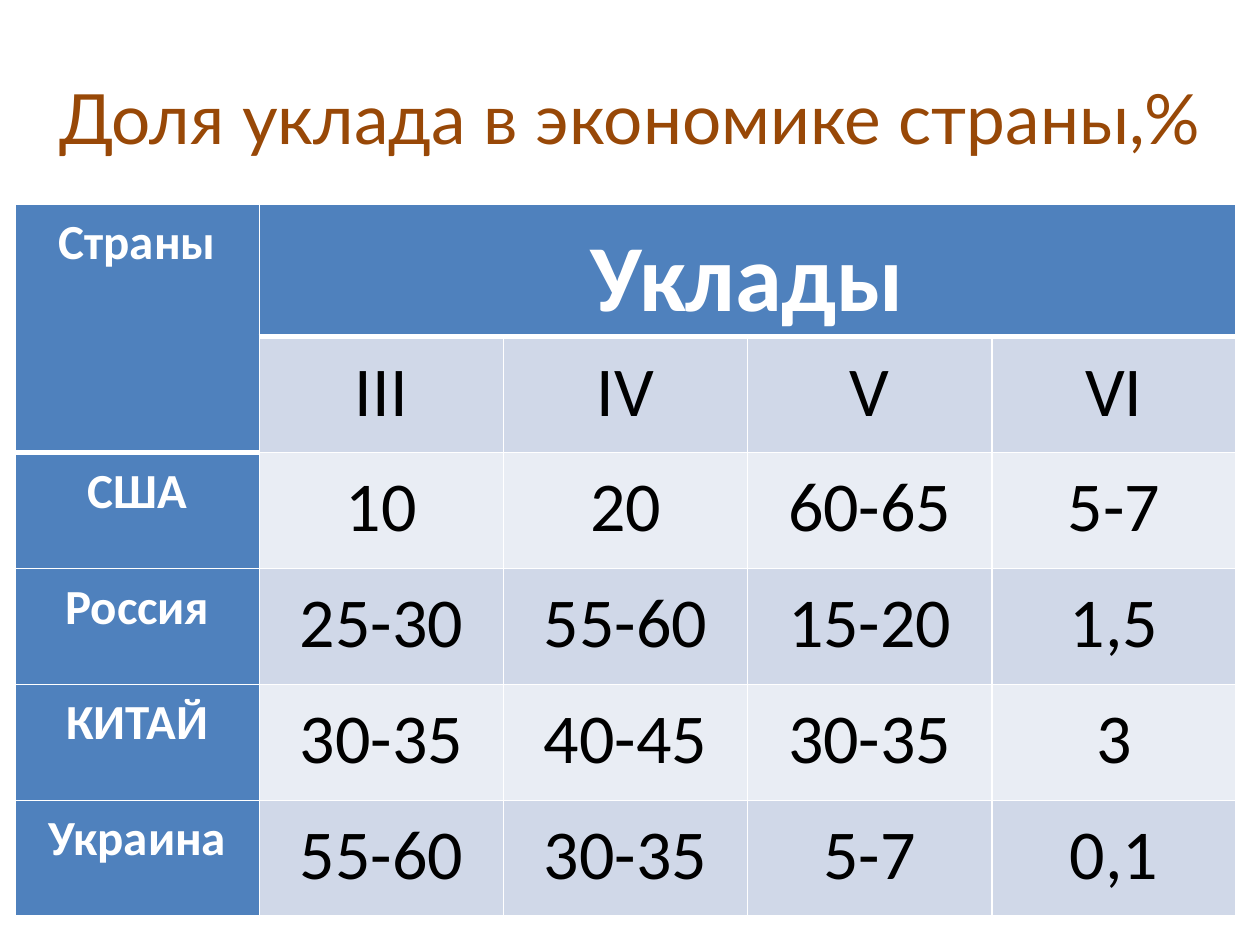
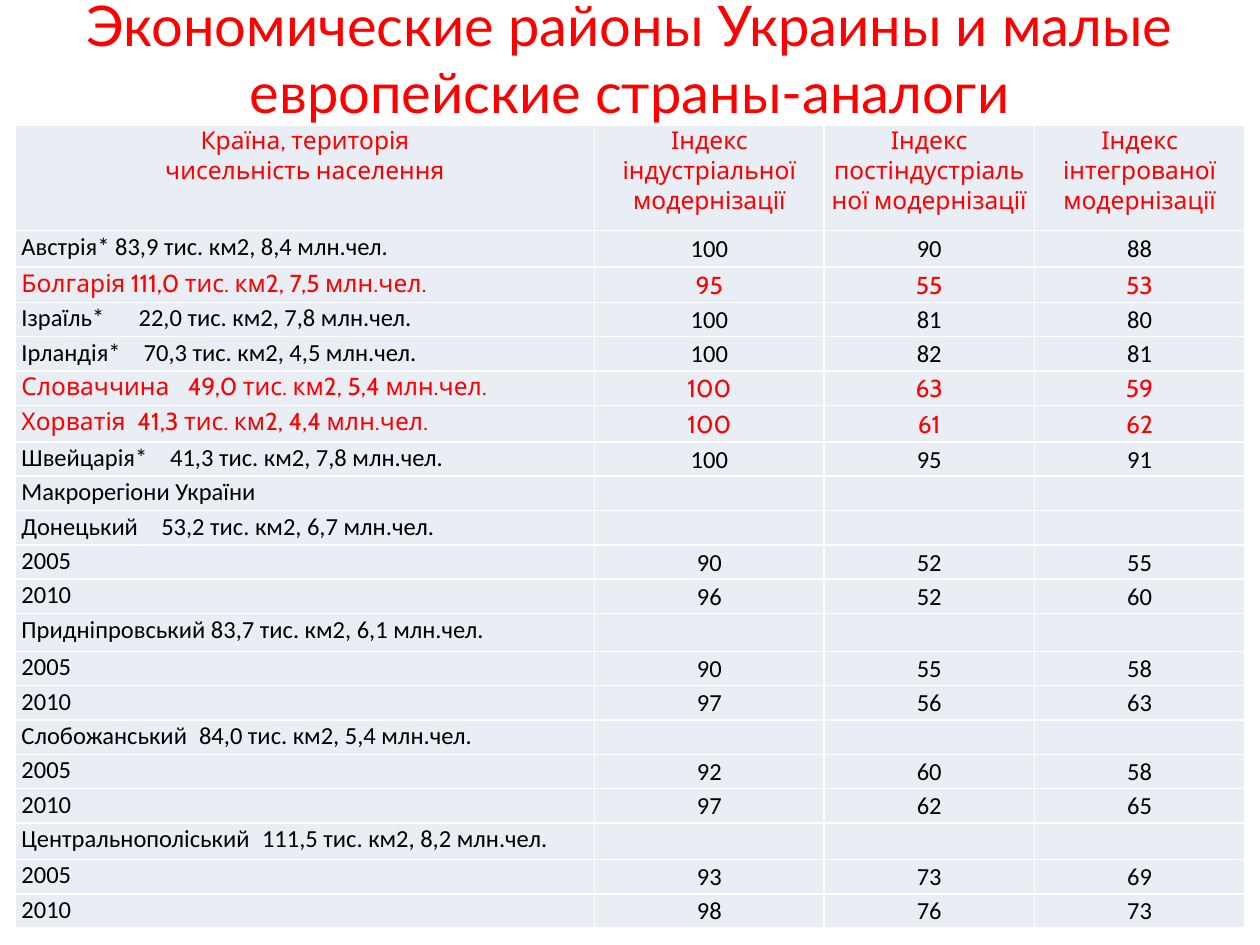
from lxml.etree import SubElement
from pptx import Presentation
from pptx.dml.color import RGBColor
from pptx.enum.text import MSO_ANCHOR, MSO_AUTO_SIZE, PP_ALIGN
from pptx.oxml.ns import qn
from pptx.util import Inches, Pt

# Colours
WHITE = RGBColor(0xFF, 0xFF, 0xFF)
BLACK = RGBColor(0x00, 0x00, 0x00)
RED = RGBColor(0xFF, 0x00, 0x00)
BROWN = RGBColor(0x98, 0x48, 0x07)
BLUE = RGBColor(0x4F, 0x81, 0xBD)
BAND = RGBColor(0xD0, 0xD8, 0xE8)
PALE = RGBColor(0xE9, 0xED, 0xF4)

# Text formats
HEAD = {"name": "Calibri", "size": Pt(28), "bold": True, "color": WHITE}
MAIN = {**HEAD, "size": Pt(54)}
DATA = {"name": "Calibri", "size": Pt(40), "bold": False, "color": BLACK}
PLAIN = {**DATA, "size": Pt(14)}
MARK = {**PLAIN, "name": "Cabin", "color": RED}

# Cell formats
WIDE = {"margin_left": Inches(0.07), "margin_right": Inches(0.07),
        "margin_top": 0, "margin_bottom": 0, "vertical_anchor": MSO_ANCHOR.TOP}
TIGHT = {**WIDE, "margin_left": Inches(0.05), "margin_right": Inches(0.05),
         "margin_top": Inches(0.01)}
MID = {**TIGHT, "vertical_anchor": MSO_ANCHOR.MIDDLE}

prs = Presentation()
prs.slide_width, prs.slide_height = Inches(10), Inches(7.5)


def start(text, top, height, size, color):
    """Add a slide with a title across its full width."""
    slide = prs.slides.add_slide(prs.slide_layouts[5])
    title = slide.shapes.title
    title.left, title.top = 0, Inches(top)
    title.width, title.height = prs.slide_width, Inches(height)
    frame = title.text_frame
    frame.text = text
    frame.auto_size = MSO_AUTO_SIZE.NONE
    frame.vertical_anchor = MSO_ANCHOR.MIDDLE
    para = frame.paragraphs[0]
    para.alignment = PP_ALIGN.CENTER
    font = para.runs[0].font
    font.name, font.size, font.color.rgb = "Lato", Pt(size), color
    return slide


def fill_cell(cell, text, look, box, fill, align=PP_ALIGN.CENTER, space=1.0, base=1):
    """Write one cell with white borders; base is the bottom line width."""
    for key, value in box.items():
        setattr(cell, key, value)
    props = cell._tc.get_or_add_tcPr()
    for side, width in {"lnL": 1, "lnR": 1, "lnT": 1, "lnB": base}.items():
        line = SubElement(props, qn(f"a:{side}"), w=str(Pt(width)))
        SubElement(SubElement(line, qn("a:solidFill")), qn("a:srgbClr"), val=str(WHITE))
    cell.fill.solid()
    cell.fill.fore_color.rgb = fill
    cell.text_frame.text = text
    for para in cell.text_frame.paragraphs:
        para.alignment, para.line_spacing = align, space
        for run in para.runs:
            for key, value in look.items():
                if key == "color":
                    run.font.color.rgb = value
                else:
                    setattr(run.font, key, value)
        if not para.runs:
            SubElement(para._p, qn("a:endParaRPr"), sz=str(int(look["size"].pt * 100)))


# Slide 1: share of each mode by country
slide = start("Доля уклада в экономике страны,%", 0.3, 1.25, 39.6, BROWN)
shares = [
    ["Страны", "Уклады", "", "", ""],
    ["", "III", "IV", "V", "VI"],
    ["США", "10", "20", "60-65", "5-7"],
    ["Россия", "25-30", "55-60", "15-20", "1,5"],
    ["КИТАЙ", "30-35", "40-45", "30-35", "3"],
    ["Украина", "55-60", "30-35", "5-7", "0,1"],
]
table = slide.shapes.add_table(6, 5, Inches(0.12), Inches(1.62),
                               Inches(9.69), Inches(5.64)).table
for i, row in enumerate(shares):
    table.rows[i].height = Inches(0.92 if i else 1.04)
    for j, text in enumerate(row):
        side = i == 0 or j == 0
        look = MAIN if i == 0 and j else HEAD if side else DATA
        fill = BLUE if side else BAND if i % 2 else PALE
        base = 3 if i == 0 or (i == 1 and j == 0) else 1
        fill_cell(table.cell(i, j), text, look, WIDE, fill, space=1.15, base=base)
table.cell(0, 0).merge(table.cell(1, 0))
table.cell(0, 1).merge(table.cell(0, 4))

# Slide 2: regions and similar countries; name, tab stop, size, indices
slide = start("Экономические районы Украины и малые европейские страны-аналоги",
              0, 0.92, 32, RED)
heads = ["Країна, територія\nчисельність населення",
         "Індекс індустріальної модернізації",
         "Індекс постіндустріальної модернізації",
         "Індекс інтегрованої модернізації"]
places = [
    ("Австрія* 83,9 тис. км2, 8,4 млн.чел.", 0, "", "100 90 88"),
    ("Болгарія 111,0 тис. км2, 7,5 млн.чел.", 0, "", "95 55 53"),
    ("Ізраїль*", 0.93, "22,0 тис. км2, 7,8 млн.чел.", "100 81 80"),
    ("Ірландія*", 0.97, "70,3 тис. км2, 4,5 млн.чел.", "100 82 81"),
    ("Словаччина", 1.32, "49,0 тис. км2, 5,4 млн.чел.", "100 63 59"),
    ("Хорватія", 0.92, "41,3 тис. км2, 4,4 млн.чел.", "100 61 62"),
    ("Швейцарія*", 1.18, "41,3 тис. км2, 7,8 млн.чел.", "100 95 91"),
    ("Макрорегіони України", 0, "", ""),
    ("Донецький", 1.11, "53,2 тис. км2, 6,7 млн.чел.", ""),
    ("2005", 0, "", "90 52 55"),
    ("2010", 0, "", "96 52 60"),
    ("Придніпровський 83,7 тис. км2, 6,1 млн.чел.", 0, "", ""),
    ("2005", 0, "", "90 55 58"),
    ("2010", 0, "", "97 56 63"),
    ("Слобожанський", 1.41, "84,0 тис. км2, 5,4 млн.чел.", ""),
    ("2005", 0, "", "92 60 58"),
    ("2010", 0, "", "97 62 65"),
    ("Центральнополіський", 1.91, "111,5 тис. км2, 8,2 млн.чел.", ""),
    ("2005", 0, "", "93 73 69"),
    ("2010", 0, "", "98 76 73"),
]
marked = ("Болгарія", "Словаччина", "Хорватія")
tall = {0: 0.84, 1: 0.29, 2: 0.28, 6: 0.29, 12: 0.3, 18: 0.29}
short = (6.38 - sum(tall.values())) / (21 - len(tall))
table = slide.shapes.add_table(21, 4, Inches(0.12), Inches(0.99),
                               Inches(9.76), Inches(6.38)).table
for col, width in zip(table.columns, (4.6, 1.82, 1.67, 1.67)):
    col.width = Inches(width)
for i, row in enumerate(table.rows):
    row.height = Inches(tall.get(i, short))
for j, text in enumerate(heads):
    fill_cell(table.cell(0, j), text, MARK, TIGHT, PALE)
for i, (name, stop, size, marks) in enumerate(places, 1):
    look = MARK if name.startswith(marked) else PLAIN
    first = table.cell(i, 0)
    fill_cell(first, f"{name}\t{size}" if stop else name, look, TIGHT, PALE,
              PP_ALIGN.JUSTIFY)
    if stop:
        props = first.text_frame.paragraphs[0]._p.get_or_add_pPr()
        tabs = SubElement(props, qn("a:tabLst"))
        SubElement(tabs, qn("a:tab"), pos=str(Inches(stop)), algn="l")
    for j, text in enumerate(marks.split() or [""] * 3, 1):
        fill_cell(table.cell(i, j), text, look, MID, PALE)

prs.save("out.pptx")
